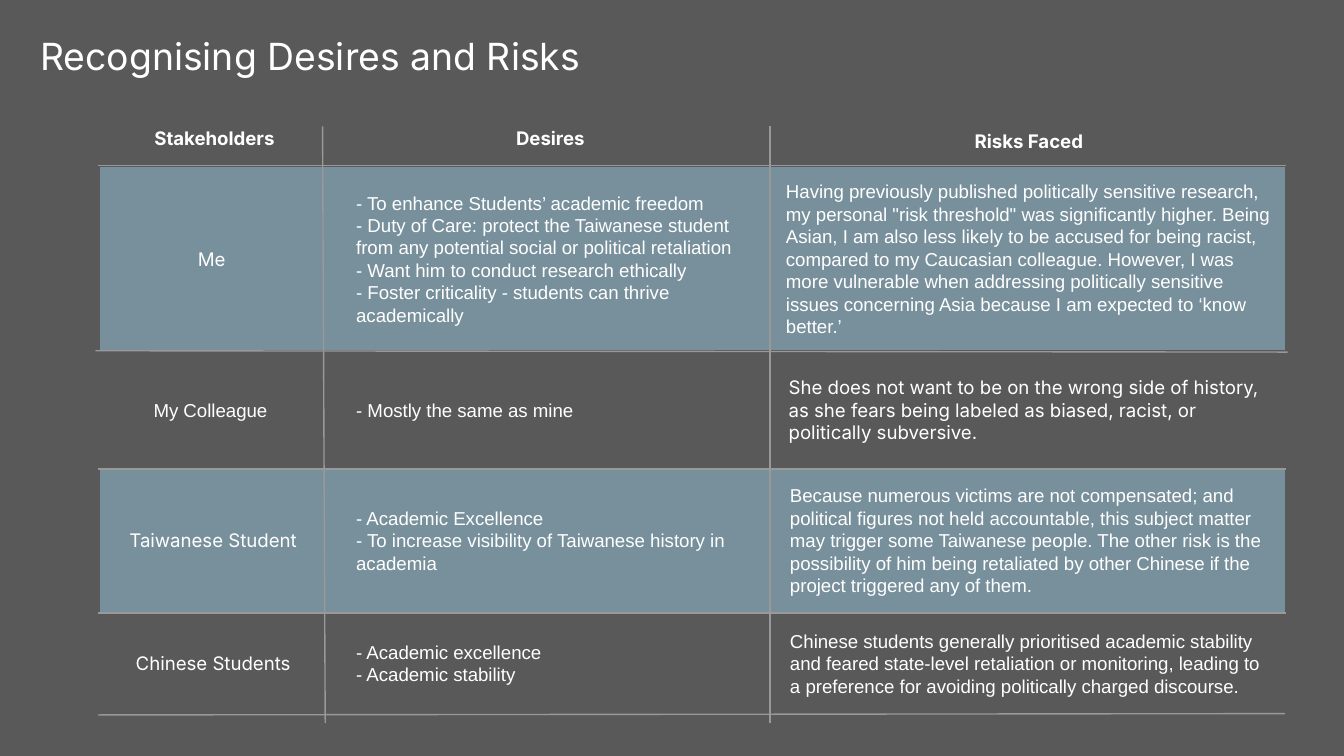
from collections import namedtuple

from lxml.etree import SubElement
from pptx import Presentation
from pptx.dml.color import RGBColor
from pptx.enum.shapes import MSO_CONNECTOR, MSO_SHAPE
from pptx.enum.text import MSO_ANCHOR, MSO_AUTO_SIZE, PP_ALIGN
from pptx.oxml.ns import qn
from pptx.util import Emu, Pt

SCALE = 9144  # EMU in one px, 100 px to the inch
BACKGROUND, BAND, RULE, INK = "595959", "78909C", "999999", "FFFFFF"

Box = namedtuple("Box", "left top width height")
Row = namedtuple("Row", "top height shaded name_left name name_font desires "
                        "risks_left risks risks_font")

TABLE = Box(74, 82, 883, 456)
NAME_WIDTH, DESIRES_LEFT, DESIRES_WIDTH, RISKS_WIDTH = 159, 176, 319, 380
HEADINGS = [("Stakeholders", Box(1, 0, 169, 37)),
            ("Desires", Box(169, 0, 333, 37)),
            ("Risks Faced", Box(502, 2, 379, 37))]
ROWS = [
    Row(42, 137, True, 4, "Me", "Inter",
        ["- To enhance Students’ academic freedom",
         "- Duty of Care: protect the Taiwanese student from any potential "
         "social or political retaliation",
         "- Want him to conduct research ethically",
         "- Foster criticality - students can thrive academically"],
        501,
        "Having previously published politically sensitive research, my personal "
        "\"risk threshold\" was significantly higher. Being Asian, I am also less "
        "likely to be accused for being racist, compared to my Caucasian colleague. "
        "However, I was more vulnerable when addressing politically sensitive issues "
        "concerning Asia because I am expected to ‘know better.’", "Arial"),
    Row(180, 86, False, 3, "My Colleague", "Arial",
        ["- Mostly the same as mine"],
        503,
        "She does not want to be on the wrong side of history, as she fears being "
        "labeled as biased, racist, or politically subversive.", "Inter"),
    Row(266, 108, True, 5, "Taiwanese Student", "Inter",
        ["- Academic Excellence",
         "- To increase visibility of Taiwanese history in academia"],
        504,
        "Because numerous victims are not compensated; and political figures not "
        "held accountable, this subject matter may trigger some Taiwanese people. "
        "The other risk is the possibility of him being retaliated by other Chinese "
        "if the project triggered any of them.", "Arial"),
    Row(373, 77, False, 5, "Chinese Students", "Inter",
        ["- Academic excellence", "- Academic stability"],
        504,
        "Chinese students generally prioritised academic stability and feared "
        "state-level retaliation or monitoring, leading to a preference for avoiding "
        "politically charged discourse.", "Arial"),
]
# Ends of each rule, within the table
RULES = [(-1, 41, 883, 41), (-3, 179, 884, 180), (-1, 267, 883, 267),
         (-1, 374, 883, 374), (-1, 450, 882, 449),
         (166, 12, 168, 456), (499, 12, 499, 456)]


def px(value):
    return Emu(value * SCALE)


def color(hex_code):
    return RGBColor.from_string(hex_code)


def within(outer, inner):
    """Move a box given relative to another one onto the page."""
    return Box(outer.left + inner.left, outer.top + inner.top, inner.width, inner.height)


def add_text(page, box, lines, font="Inter", size=10, bold=False, centred=False,
             middle=False, side=10, spacing=None):
    text_box = page.shapes.add_textbox(*map(px, box))
    frame = text_box.text_frame
    frame.word_wrap = True
    frame.auto_size = MSO_AUTO_SIZE.NONE
    frame.vertical_anchor = MSO_ANCHOR.MIDDLE if middle else MSO_ANCHOR.TOP
    frame.margin_left = frame.margin_right = px(side)
    frame.margin_top = frame.margin_bottom = px(10)
    frame.text = "\n".join(lines)
    for para in frame.paragraphs:
        para.alignment = PP_ALIGN.CENTER if centred else PP_ALIGN.LEFT
        if spacing:
            para.line_spacing = spacing
        for span in para.runs:
            span.font.name = font
            span.font.size = Pt(size)
            span.font.bold = bold
            span.font.color.rgb = color(INK)


def add_band(page, box):
    band = page.shapes.add_shape(MSO_SHAPE.RECTANGLE, *map(px, box))
    band.shadow.inherit = False
    band.fill.solid()
    band.fill.fore_color.rgb = color(BAND)
    band.line.color.rgb = color(BACKGROUND)
    band.line.width = Pt(0.75)


def add_rule(page, box, ends):
    x1, y1, x2, y2 = ends
    rule = page.shapes.add_connector(
        MSO_CONNECTOR.STRAIGHT, px(box.left + x1), px(box.top + y1),
        px(box.left + x2), px(box.top + y2))
    rule.line.color.rgb = color(RULE)
    rule.line.width = Pt(0.75)
    SubElement(rule._element.spPr, qn("a:effectLst"))


def add_row(page, box, row):
    name_box, desires_box, risks_box = (
        within(box, Box(left, 0, width, box.height))
        for left, width in [(row.name_left, NAME_WIDTH), (DESIRES_LEFT, DESIRES_WIDTH),
                            (row.risks_left, RISKS_WIDTH)])
    add_text(page, name_box, [row.name], row.name_font, centred=True, middle=True, side=0)
    add_text(page, desires_box, row.desires, "Arial", middle=True, side=15)
    add_text(page, risks_box, [row.risks], row.risks_font, middle=True)


def add_stakeholder_grid(page, box):
    row_boxes = [within(box, Box(0, row.top, box.width, row.height)) for row in ROWS]
    for row, row_box in zip(ROWS, row_boxes):
        if row.shaded:
            add_band(page, row_box)
    for ends in RULES:
        add_rule(page, box, ends)
    for heading, heading_box in HEADINGS:
        add_text(page, within(box, heading_box), [heading], bold=True, centred=True,
                 spacing=1.15)
    for row, row_box in zip(ROWS, row_boxes):
        add_row(page, row_box, row)


def main():
    deck = Presentation()
    deck.slide_width = px(1000)
    deck.slide_height = deck.slide_width * 9 // 16
    page = deck.slides.add_slide(deck.slide_layouts[6])
    page.background.fill.solid()
    page.background.fill.fore_color.rgb = color(BACKGROUND)
    add_stakeholder_grid(page, TABLE)
    add_text(page, Box(20, 15, 778, 54), ["Recognising Desires and Risks"], size=20)
    deck.save("out.pptx")


if __name__ == "__main__":
    main()
